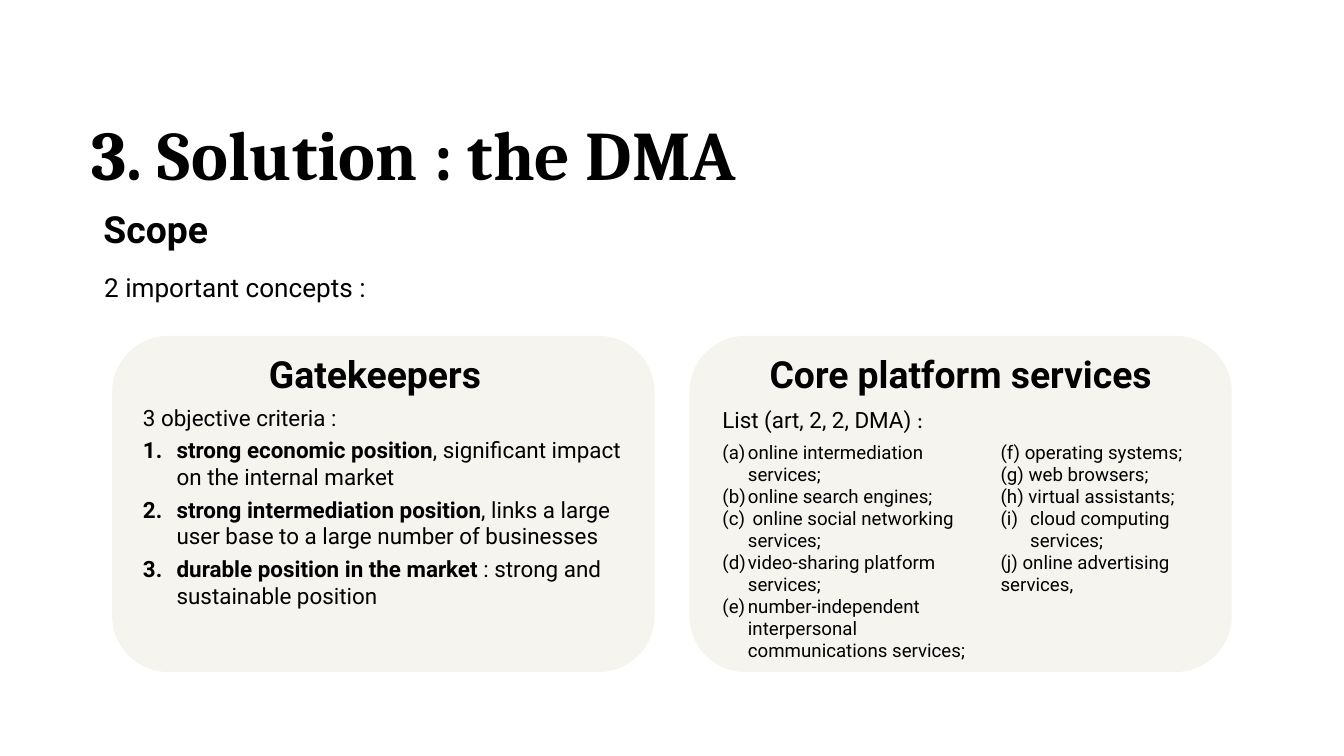
from dataclasses import dataclass
from typing import Optional

from lxml import etree
from pptx import Presentation
from pptx import util as u
from pptx.dml.color import RGBColor
from pptx.enum import shapes, text
from pptx.oxml.ns import qn

EMU_PER_PX = 9144  # 100 px to the inch
NO_GRID_STYLE = "{2D5ABB26-0587-4C30-8999-92F81FD0307C}"


@dataclass(frozen=True)
class Theme:
    ink: str = "000000"
    panel: str = "F6F4EF"
    serif: str = "Cambria"
    sans: str = "Roboto"
    colon: str = "Calibri"
    title: float = 74.5
    title_leading: float = 104.4
    heading: float = 40
    lead: float = 28
    body: float = 24
    listing: float = 20


THEME = Theme()


@dataclass(frozen=True)
class Box:
    x: int
    y: int
    w: int
    h: int


@dataclass(frozen=True)
class Run:
    text: str
    bold: bool = False
    font: str = THEME.sans


@dataclass(frozen=True)
class Numbering:
    scheme: str
    indent: int
    start: int = 1


@dataclass(frozen=True)
class Para:
    runs: tuple[Run, ...]
    size: float
    numbering: Optional[Numbering] = None
    after: int = 0
    centered: bool = False
    leading: Optional[float] = None


@dataclass(frozen=True)
class TextBlock:
    box: Box
    paras: tuple[Para, ...]
    inset: bool = False


def px(n: int) -> u.Emu:
    return u.Emu(n * EMU_PER_PX)


def place(box: Box) -> tuple[u.Emu, ...]:
    return px(box.x), px(box.y), px(box.w), px(box.h)


def number(p, numbering: Numbering) -> None:
    pPr = p._p.get_or_add_pPr()
    pPr.set("marL", str(px(numbering.indent)))
    pPr.set("indent", str(-px(numbering.indent)))
    bullet = etree.SubElement(pPr, qn("a:buAutoNum"), type=numbering.scheme)
    if numbering.start > 1:
        bullet.set("startAt", str(numbering.start))


def write(tf, paras: tuple[Para, ...]) -> None:
    for i, para in enumerate(paras):
        p = tf.add_paragraph() if i else tf.paragraphs[0]
        if para.numbering:
            number(p, para.numbering)
        if para.centered:
            p.alignment = text.PP_ALIGN.CENTER
        if para.after:
            p.space_after = u.Pt(para.after)
        if para.leading:
            p.line_spacing = u.Pt(para.leading)
        for run in para.runs:
            r = p.add_run()
            r.text = run.text
            r.font.name = run.font
            r.font.size = u.Pt(para.size)
            r.font.bold = run.bold
            r.font.color.rgb = RGBColor.from_string(THEME.ink)


def add_text(s, block: TextBlock) -> None:
    tf = s.shapes.add_textbox(*place(block.box)).text_frame
    tf.word_wrap = True
    tf.auto_size = text.MSO_AUTO_SIZE.SHAPE_TO_FIT_TEXT
    if not block.inset:
        tf.margin_left = tf.margin_top = tf.margin_right = tf.margin_bottom = 0
    write(tf, block.paras)


def add_panel(s, box: Box) -> None:
    sp = s.shapes.add_shape(shapes.MSO_SHAPE.ROUNDED_RECTANGLE, *place(box))
    sp.shadow.inherit = False
    sp.fill.solid()
    sp.fill.fore_color.rgb = RGBColor.from_string(THEME.panel)
    sp.line.fill.background()


def add_columns(s, box: Box, widths: tuple[int, ...], columns: tuple[tuple[Para, ...], ...]) -> None:
    """Lay lists side by side in a one-row table without grid or fill."""
    table = s.shapes.add_table(1, len(columns), *place(box)).table
    table.first_row = table.horz_banding = False
    table._tbl.tblPr.find(qn("a:tableStyleId")).text = NO_GRID_STYLE
    for i, (width, paras) in enumerate(zip(widths, columns)):
        table.columns[i].width = px(width)
        cell = table.cell(0, i)
        cell.fill.background()
        write(cell.text_frame, paras)


def heading(words: str, centered: bool = False) -> tuple[Para, ...]:
    return (Para((Run(words, True),), THEME.heading, centered=centered),)


def listed(words: str, numbering: Optional[Numbering] = None) -> Para:
    return Para((Run(words),), THEME.listing, numbering)


CRITERIA = (
    ("strong economic position", ", significant impact on the internal market"),
    ("strong intermediation position", ", links a large user base to a large number of businesses"),
    ("durable position in the market ", ": strong and sustainable position"),
)
STEPS = Numbering("arabicPeriod", 50)
LETTERS = Numbering("alphaLcParenBoth", 38)
LETTER_I = Numbering("alphaLcParenBoth", 44, start=9)

PANELS = tuple(Box(x, 500, 807, 500) for x in (167, 1026))

TEXTS = (
    TextBlock(Box(136, 145, 1038, 133),
              (Para((Run("3. Solution : the DMA", True, THEME.serif),), THEME.title,
                    leading=THEME.title_leading),)),
    TextBlock(Box(154, 307, 1710, 67), heading("Scope")),
    TextBlock(Box(155, 404, 1721, 47), (Para((Run("2 important concepts :"),), THEME.lead),)),
    TextBlock(Box(319, 522, 478, 67), heading("Gatekeepers", True)),
    TextBlock(Box(1122, 522, 615, 67), heading("Core platform services", True)),
    TextBlock(Box(203, 596, 756, 318),
              (Para((Run("3 objective criteria :"),), THEME.body, after=6),
               *(Para((Run(name, True), Run(detail)), THEME.body, STEPS, after=6)
                 for name, detail in CRITERIA)),
              inset=True),
    TextBlock(Box(1065, 600, 659, 50),
              (Para((Run("List (art, 2, 2, DMA) "), Run(":", font=THEME.colon)), THEME.body),),
              inset=True),
)

SERVICES = (
    tuple(listed(words, LETTERS) for words in (
        "online intermediation services;",
        "online search engines;",
        " online social networking services;",
        "video-sharing platform services;",
        "number-independent interpersonal communications services;",
    )),
    (
        listed("(f) operating systems;"),
        listed("(g) web browsers;"),
        listed("(h) virtual assistants;"),
        listed("cloud computing services;", LETTER_I),
        listed("(j) online advertising services,"),
    ),
)


def main() -> None:
    prs = Presentation()
    prs.slide_width, prs.slide_height = px(2000), px(1125)
    s = prs.slides.add_slide(prs.slide_layouts[6])
    for box in PANELS:
        add_panel(s, box)
    for block in TEXTS:
        add_text(s, block)
    add_columns(s, Box(1065, 653, 732, 343), (414, 318), SERVICES)
    prs.save("out.pptx")


if __name__ == "__main__":
    main()
